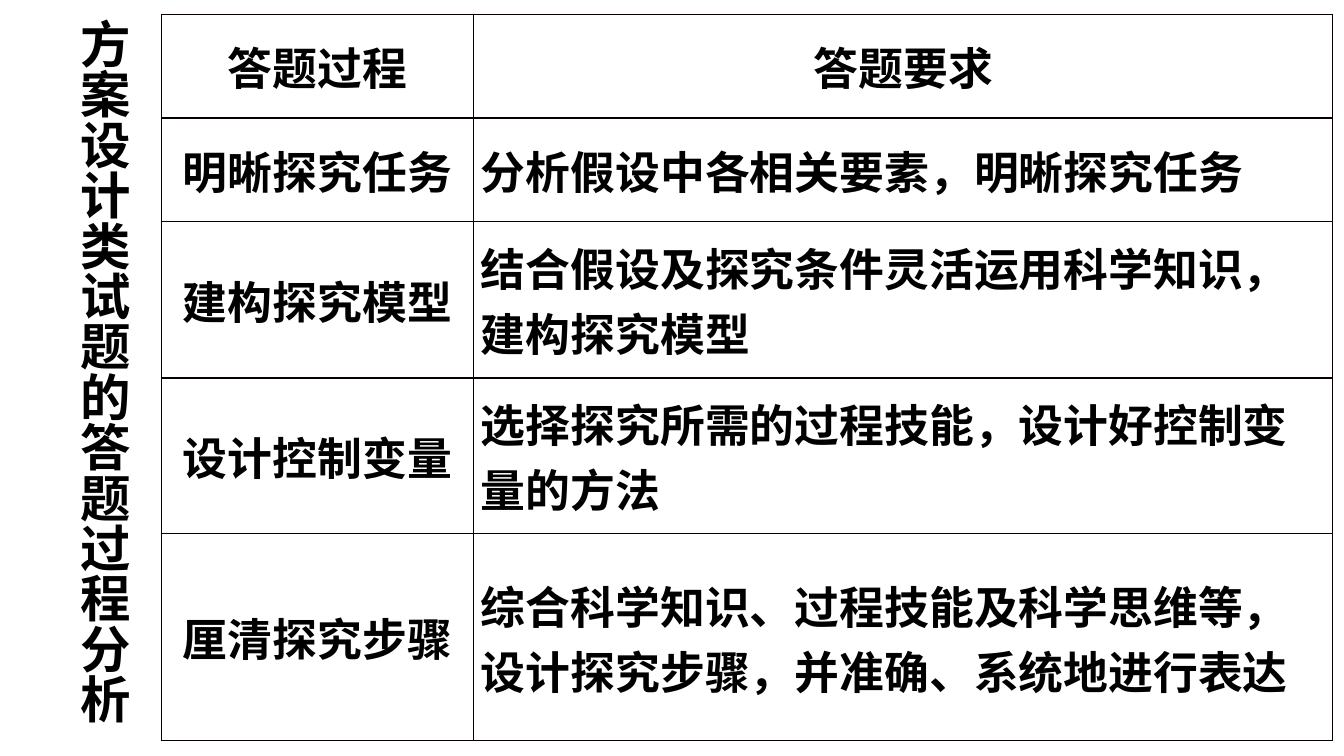
import pptx
import pptx.util
import pptx.dml.color
import pptx.enum.text
import pptx.oxml.ns
import lxml.etree
from pptx.util import Inches

BLACK = pptx.dml.color.RGBColor(0x00, 0x00, 0x00)
BORDER = pptx.dml.color.RGBColor(0x08, 0x00, 0x00)
TABLE_FONT = "Noto Sans CJK SC"
COLUMN_WIDTHS = [3.1, 8.52]
ROW_HEIGHTS = [1.03, 1.03, 1.55, 1.54, 2.06]
ROWS = [
    ("答题过程", "答题要求"),
    ("明晰探究任务", "分析假设中各相关要素，明晰探究任务"),
    ("建构探究模型", "结合假设及探究条件灵活运用科学知识，建构探究模型"),
    ("设计控制变量", "选择探究所需的过程技能，设计好控制变量的方法"),
    ("厘清探究步骤", "综合科学知识、过程技能及科学思维等，设计探究步骤，并准确、系统地进行表达"),
]


def format_paragraph(paragraph, font_name, size, alignment):
    paragraph.alignment = alignment
    font = paragraph.font
    font.name = font_name
    font.size = pptx.util.Pt(size)
    font.bold = True
    font.color.rgb = BLACK


def add_borders(cell):
    properties = cell._tc.get_or_add_tcPr()
    for position, side in enumerate(("lnL", "lnR", "lnT", "lnB")):
        line = lxml.etree.Element(pptx.oxml.ns.qn("a:" + side), w=str(pptx.util.Pt(1)))
        fill = lxml.etree.SubElement(line, pptx.oxml.ns.qn("a:solidFill"))
        lxml.etree.SubElement(fill, pptx.oxml.ns.qn("a:srgbClr"), val=str(BORDER))
        properties.insert(position, line)


presentation = pptx.Presentation()
presentation.slide_width = Inches(13.33)
presentation.slide_height = Inches(7.5)
slide = presentation.slides.add_slide(presentation.slide_layouts[5])

# Vertical title
title = slide.shapes.title
title.left, title.top = Inches(0.41), Inches(0.14)
title.width, title.height = Inches(1.02), Inches(7.5)
title_frame = title.text_frame
title_frame.text = "方案设计类试题的答题过程分析"
title_frame.word_wrap = True
title_frame.auto_size = pptx.enum.text.MSO_AUTO_SIZE.NONE
title_frame.vertical_anchor = pptx.enum.text.MSO_ANCHOR.TOP
title_frame._txBody.bodyPr.set("vert", "eaVert")
format_paragraph(title_frame.paragraphs[0], "Arial", 36, pptx.enum.text.PP_ALIGN.LEFT)

# Table of answering steps and requirements
table = slide.shapes.add_table(
    len(ROWS), len(COLUMN_WIDTHS), Inches(1.6), Inches(0.14),
    Inches(sum(COLUMN_WIDTHS)), Inches(sum(ROW_HEIGHTS))).table
table.horz_banding = False
table.first_row = False
for column, width in zip(table.columns, COLUMN_WIDTHS):
    column.width = Inches(width)
for row, height in zip(table.rows, ROW_HEIGHTS):
    row.height = Inches(height)

for row_index, texts in enumerate(ROWS):
    for column_index, text in enumerate(texts):
        cell = table.cell(row_index, column_index)
        cell.text = text
        cell.fill.background()
        cell.vertical_anchor = pptx.enum.text.MSO_ANCHOR.MIDDLE
        cell.margin_left = cell.margin_right = Inches(0.07)
        cell.margin_top = cell.margin_bottom = 0
        centred = row_index == 0 or column_index == 0
        alignment = pptx.enum.text.PP_ALIGN.CENTER if centred else pptx.enum.text.PP_ALIGN.LEFT
        paragraph = cell.text_frame.paragraphs[0]
        format_paragraph(paragraph, TABLE_FONT, 32, alignment)
        # Chinese characters take the East Asian typeface
        lxml.etree.SubElement(
            paragraph.font._rPr, pptx.oxml.ns.qn("a:ea"), typeface=TABLE_FONT)
        add_borders(cell)

presentation.save("out.pptx")
